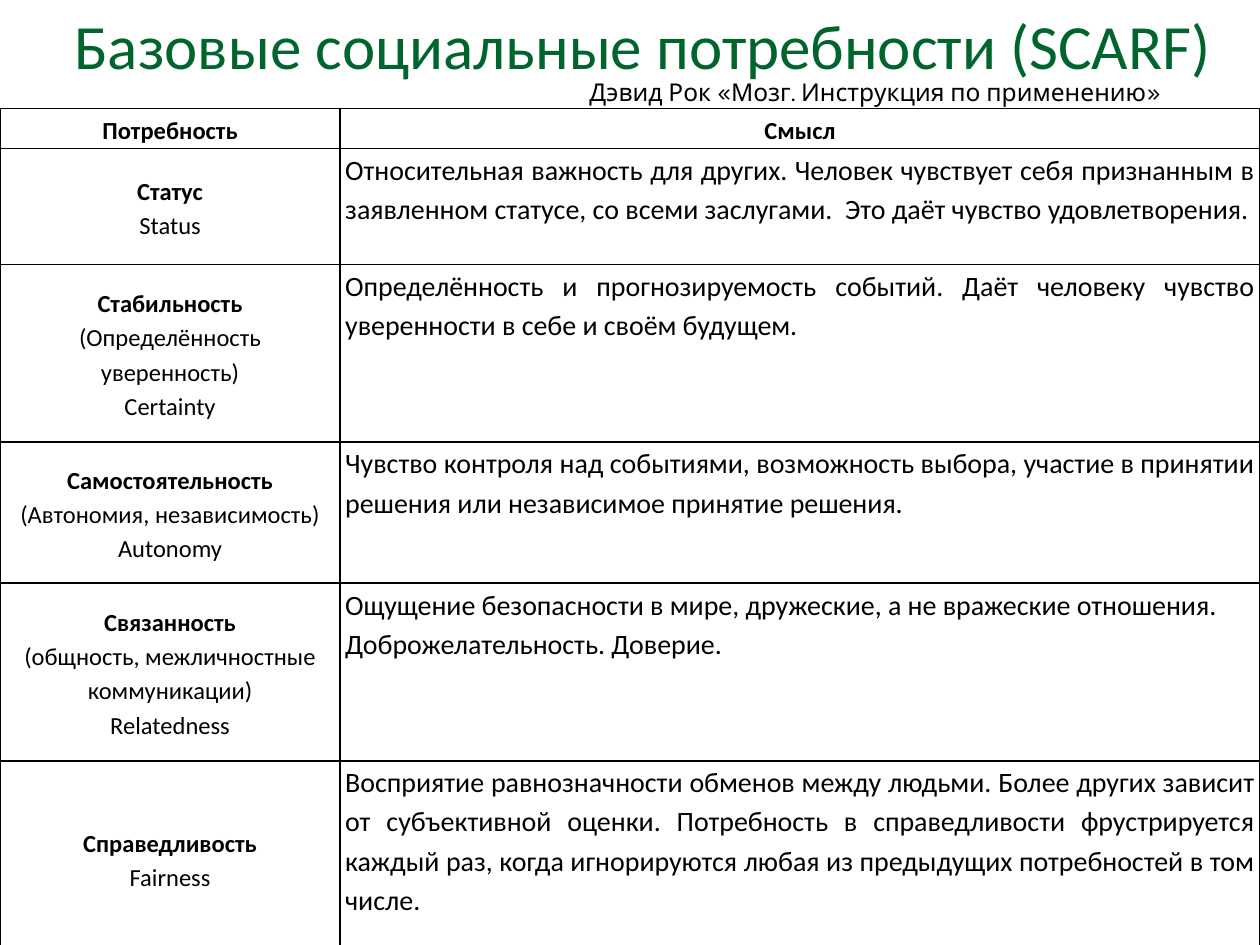
from lxml import etree
from pptx import Presentation
from pptx import util as u
from pptx.dml.color import RGBColor
from pptx.enum import text
from pptx.oxml.ns import qn

COLORS = {"title": "00642D", "text": "000000", "border": "000000", "cell": "FFFFFF"}

TITLE = "Базовые социальные потребности (SCARF)"
SOURCE = "Дэвид Рок «Мозг. Инструкция по применению»"
HEADER = ("Потребность", "Смысл")

# Row height, need (first line is bold), meaning
NEEDS = [
    (0.92, ["Статус", "Status"],
     ["Относительная важность для других. Человек чувствует себя признанным в "
      "заявленном статусе, со всеми заслугами.  Это даёт чувство удовлетворения."]),
    (1.41, ["Стабильность", "(Определённость", "уверенность)", "Certainty"],
     ["Определённость и прогнозируемость событий. Даёт человеку чувство "
      "уверенности в себе и своём будущем."]),
    (1.12, ["Самостоятельность", "(Автономия, независимость) Autonomy"],
     ["Чувство контроля над событиями, возможность выбора, участие в принятии "
      "решения или независимое принятие решения."]),
    (1.41, ["Связанность", "(общность, межличностные коммуникации)", "Relatedness"],
     ["Ощущение безопасности в мире, дружеские, а не вражеские отношения.",
      "Доброжелательность. Доверие."]),
    (1.56, ["Справедливость", "Fairness"],
     ["Восприятие равнозначности обменов между людьми. Более других зависит от "
      "субъективной оценки. Потребность в справедливости фрустрируется каждый раз, "
      "когда игнорируются любая из предыдущих потребностей в том числе."]),
]
HEADER_HEIGHT = 0.32
COLUMN_WIDTHS = (2.7, 7.3)
TABLE_TOP = 0.86


def write(frame, lines, size=14, font="Calibri", color="text", bold_lines=0,
          align=text.PP_ALIGN.LEFT, spacing=1.0):
    """Write each line as a paragraph; the first bold_lines are bold."""
    for index, line in enumerate(lines):
        para = frame.paragraphs[0] if index == 0 else frame.add_paragraph()
        para.alignment = align
        para.line_spacing = spacing
        span = para.add_run()
        span.text = line
        span.font.size = u.Pt(size)
        span.font.name = font
        span.font.bold = index < bold_lines
        span.font.color.rgb = RGBColor.from_string(COLORS[color])


def add_label(page, place, line, wrap=True, **style):
    box = page.shapes.add_textbox(*(u.Inches(value) for value in place))
    box.text_frame.word_wrap = wrap
    write(box.text_frame, [line], **style)


def format_cell(cell, anchor):
    cell.vertical_anchor = anchor
    cell.margin_left = cell.margin_right = u.Inches(0.04)
    cell.margin_top = cell.margin_bottom = 0
    properties = cell._tc.get_or_add_tcPr()
    for side in ("a:lnL", "a:lnR", "a:lnT", "a:lnB"):
        line = etree.SubElement(properties, qn(side), w=str(u.Pt(1)))
        fill = etree.SubElement(line, qn("a:solidFill"))
        etree.SubElement(fill, qn("a:srgbClr"), val=COLORS["border"])
    cell.fill.solid()
    cell.fill.fore_color.rgb = RGBColor.from_string(COLORS["cell"])


def add_needs_table(page):
    heights = [HEADER_HEIGHT] + [height for height, _, _ in NEEDS]
    table = page.shapes.add_table(
        len(heights), len(COLUMN_WIDTHS), 0, u.Inches(TABLE_TOP),
        u.Inches(sum(COLUMN_WIDTHS)), u.Inches(sum(heights))).table
    for column, width in zip(table.columns, COLUMN_WIDTHS):
        column.width = u.Inches(width)
    for row, height in zip(table.rows, heights):
        row.height = u.Inches(height)

    centred = {"align": text.PP_ALIGN.CENTER, "bold_lines": 1, "spacing": 1.15}
    justified = {"align": text.PP_ALIGN.JUSTIFY, "size": 16, "spacing": 1.15}
    middle, top = text.MSO_ANCHOR.MIDDLE, text.MSO_ANCHOR.TOP

    # Header row
    for column, heading in enumerate(HEADER):
        cell = table.cell(0, column)
        format_cell(cell, middle)
        write(cell.text_frame, [heading], **centred)

    # One row per need
    for row, (_, need, meaning) in enumerate(NEEDS, start=1):
        for column, (lines, anchor, style) in enumerate(
                [(need, middle, centred), (meaning, top, justified)]):
            cell = table.cell(row, column)
            format_cell(cell, anchor)
            write(cell.text_frame, lines, **style)


def main():
    deck = Presentation()
    deck.slide_width, deck.slide_height = u.Inches(10), u.Inches(7.5)
    page = deck.slides.add_slide(deck.slide_layouts[6])
    add_needs_table(page)
    add_label(page, (4.58, 0.56, 5.43, 0.34), SOURCE, font="Karla")
    add_label(page, (0.49, 0, 9.32, 0.71), TITLE, wrap=False, size=36, color="title")
    deck.save("out.pptx")


if __name__ == "__main__":
    main()
